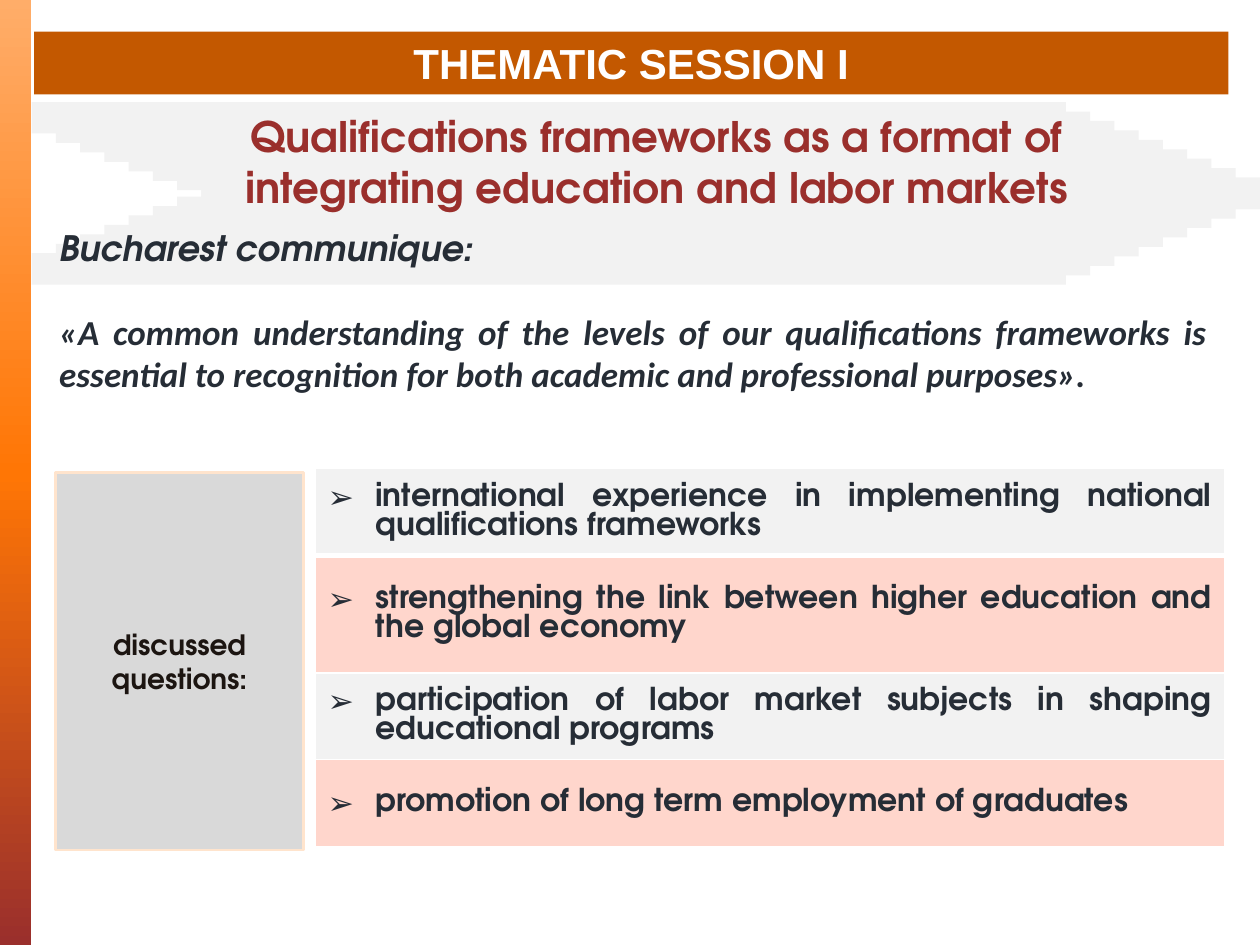
from copy import deepcopy

from lxml import etree
from pptx import Presentation
from pptx.dml.color import RGBColor
from pptx.enum import shapes, text
from pptx.oxml import ns
from pptx.util import Inches, Pt

THEME = {
    "display": "TeX Gyre Adventor", "body": "Calibri", "banner": "Arial",
    "heading_size": 24, "body_size": 20, "question_size": 18, "label_size": 16,
    "orange": "C35800", "white": "FFFFFF", "red": "9A2F2C", "ink": "262D36",
    "pale": "F2F2F2", "pink": "FFD6CC", "grey": "D9D9D9", "cream": "FFE4CD",
    "black": "1C1511",
}
SIDEBAR_STOPS = [(0, "FFAD69"), (0.5, "FF7605"), (1, "9A2F2C")]

BANNER = "THEMATIC SESSION I"
TOPIC = "Qualifications frameworks as a format of integrating education and labor markets"
COMMUNIQUE = "Bucharest communique:"
QUOTE = ("«A common understanding of the levels of our qualifications frameworks is "
         "essential to recognition for both academic and professional purposes».")
LABEL = "discussed questions:"
QUESTIONS = [  # text, row height
    ("international experience in implementing national qualifications frameworks", 0.69),
    ("strengthening the link between higher education and the global economy", 0.93),
    ("participation of labor market subjects in shaping educational programs", 0.69),
    ("promotion of long term employment of graduates", 0.69),
]
STEPS = 9  # bars in each half of the arrow
STEP_WIDTH, STEP_HEIGHT = 8.21, 0.25
ARROW_LEFT, ARROW_TIP_LEFT = 0.25, 1.79
ARROW_TOP, ARROW_MIDDLE, ARROW_BOTTOM = 0.81, 1.41, 2.01


def color(name):
    return RGBColor.from_string(THEME[name])


def add_box(parent, left, top, width, height, fill=None):
    box = parent.add_shape(shapes.MSO_SHAPE.RECTANGLE, *map(Inches, (left, top, width, height)))
    box.shadow.inherit = False
    box.line.fill.background()
    if fill:
        box.fill.solid()
        box.fill.fore_color.rgb = color(fill)
    return box


def place(shape, left, top, width, height):
    """Position a placeholder and bring it to the front."""
    shape.left, shape.top, shape.width, shape.height = map(Inches, (left, top, width, height))
    shape.text_frame.auto_size = text.MSO_AUTO_SIZE.NONE
    tree = shape._element.getparent()
    tree.append(shape._element)


def style(para, font, size, ink, align, italic=False):
    para.alignment = align
    for span in para.runs:
        span.font.name = THEME[font]
        span.font.size = Pt(THEME[size])
        span.font.color.rgb = color(ink)
        span.font.bold = True
        span.font.italic = italic


def set_bullet(para, mark=None, indent=0):
    props = para._p.get_or_add_pPr()
    props.set("marL", str(Inches(indent)))
    props.set("indent", str(-Inches(indent)))
    if mark:
        etree.SubElement(props, ns.qn("a:buFont")).set("typeface", THEME["banner"])
        etree.SubElement(props, ns.qn("a:buChar")).set("char", mark)
    else:
        etree.SubElement(props, ns.qn("a:buNone"))


def set_borders(cell, bottom):
    props = cell._tc.get_or_add_tcPr()
    for index, (side, width) in enumerate((("L", 1), ("R", 1), ("T", 1), ("B", bottom))):
        line = etree.Element(ns.qn(f"a:ln{side}"), w=str(Pt(width)))
        fill = etree.SubElement(line, ns.qn("a:solidFill"))
        etree.SubElement(fill, ns.qn("a:srgbClr")).set("val", THEME["white"])
        props.insert(index, line)


def add_sidebar(page):
    bar = add_box(page.shapes, 0, 0, 0.25, 7.5)
    bar.fill.gradient()
    bar.fill.gradient_angle = 270
    stops = bar._element.spPr.find(ns.qn("a:gradFill")).find(ns.qn("a:gsLst"))
    stops.append(deepcopy(stops[0]))
    for stop, (position, value) in zip(bar.fill.gradient_stops, SIDEBAR_STOPS):
        stop.position = position
        stop.color.rgb = RGBColor.from_string(value)


def add_stepped_arrow(page):
    group = page.shapes.add_group_shape()
    for edge in (ARROW_TOP, ARROW_BOTTOM):
        for step in range(STEPS):
            share = step / (STEPS - 1)
            left = ARROW_LEFT + share * (ARROW_TIP_LEFT - ARROW_LEFT)
            top = edge + share * (ARROW_MIDDLE - edge)
            add_box(group.shapes, left, top, STEP_WIDTH, STEP_HEIGHT, "pale")


def add_heading(page):
    title = page.shapes.title
    place(title, 0.27, 0.25, 9.48, 0.5)
    title.fill.solid()
    title.fill.fore_color.rgb = color("orange")
    title.text_frame.text = BANNER
    style(title.text_frame.paragraphs[0], "banner", "heading_size", "white", text.PP_ALIGN.CENTER)

    topic = page.shapes.add_textbox(*map(Inches, (1.08, 0.83, 8.26, 0.91))).text_frame
    topic.word_wrap = True
    topic.text = TOPIC
    style(topic.paragraphs[0], "display", "heading_size", "red", text.PP_ALIGN.CENTER)


def add_communique(page):
    body = page.placeholders[1]
    place(body, 0.37, 1.75, 9.31, 1.78)
    body.text_frame.text = f"{COMMUNIQUE}\n{QUOTE}"
    for para, font, gap in zip(body.text_frame.paragraphs, ("display", "body"), (0, 24)):
        para.space_before = Pt(gap)
        set_bullet(para)
        style(para, font, "body_size", "ink", text.PP_ALIGN.JUSTIFY, italic=True)


def add_questions(page):
    height = sum(row_height for _, row_height in QUESTIONS)
    frame = page.shapes.add_table(len(QUESTIONS), 1, *map(Inches, (2.5, 3.72, 7.22, height)))
    table = frame.table
    table.first_row = table.horz_banding = False
    for index, (question, row_height) in enumerate(QUESTIONS):
        table.rows[index].height = Inches(row_height)
        cell = table.cell(index, 0)
        cell.fill.solid()
        cell.fill.fore_color.rgb = color("pink" if index % 2 else "pale")
        cell.vertical_anchor = text.MSO_ANCHOR.MIDDLE
        set_borders(cell, bottom=1 if index else 3)
        cell.text_frame.text = question
        para = cell.text_frame.paragraphs[0]
        set_bullet(para, "➢", 0.38)
        style(para, "display", "question_size", "ink", text.PP_ALIGN.JUSTIFY)

    label = add_box(page.shapes, 0.44, 3.75, 1.97, 3, "grey")
    label.line.color.rgb = color("cream")
    label.line.width = Pt(1.25)
    label.text_frame.word_wrap = True
    label.text_frame.vertical_anchor = text.MSO_ANCHOR.MIDDLE
    label.text_frame.text = LABEL
    style(label.text_frame.paragraphs[0], "display", "label_size", "black", text.PP_ALIGN.CENTER)


def main():
    deck = Presentation()
    deck.slide_width, deck.slide_height = Inches(10), Inches(7.5)
    page = deck.slides.add_slide(deck.slide_layouts[1])
    add_sidebar(page)
    add_stepped_arrow(page)
    add_heading(page)
    add_communique(page)
    add_questions(page)
    deck.save("out.pptx")


if __name__ == "__main__":
    main()
